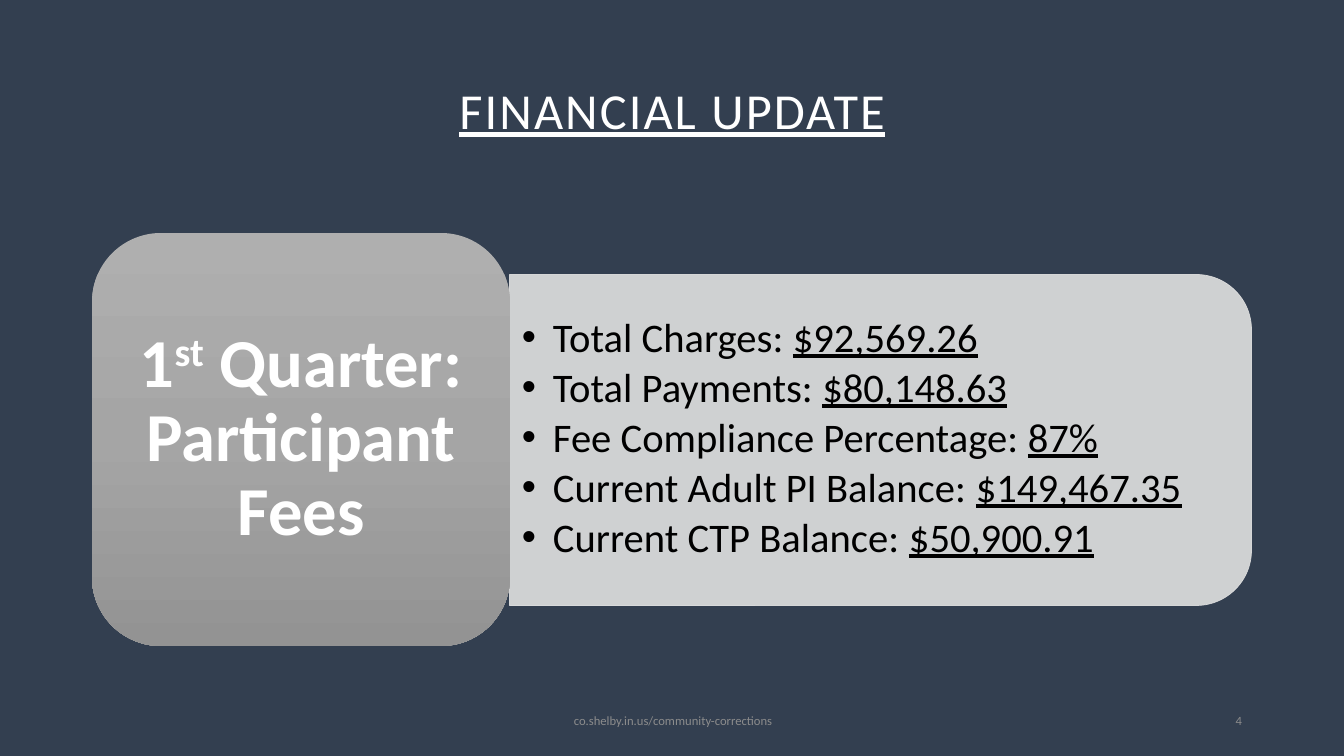
from dataclasses import dataclass

from copy import deepcopy
from pptx import Presentation, util as u
from pptx.dml.color import RGBColor
from pptx.enum import shapes, text
from pptx.oxml import ns, xmlchemy

NAVY = RGBColor(0x33, 0x3F, 0x50)
WHITE = RGBColor(0xFF, 0xFF, 0xFF)
BLACK = RGBColor(0, 0, 0)
GRAY = RGBColor(0x8C, 0x8C, 0x8C)
PALE = RGBColor(0xE1, 0xE1, 0xE1)
SHADES = [RGBColor(0xAF, 0xAF, 0xAF), RGBColor(0xA5, 0xA5, 0xA5),
          RGBColor(0x93, 0x93, 0x93)]
FONT = "Calibri"
ALIGN = text.PP_ALIGN
KIND = shapes.MSO_SHAPE


@dataclass
class Box:
    left: int
    top: int
    width: int
    height: int

    def emu(self) -> list:
        return [px(v) for v in (self.left, self.top, self.width, self.height)]


@dataclass
class Fee:
    label: str
    amount: str


@dataclass
class Note:
    words: str
    box: Box
    align: ALIGN


FEES = [
    Fee("Total Charges: ", "$92,569.26"),
    Fee("Total Payments: ", "$80,148.63"),
    Fee("Fee Compliance Percentage: ", "87%"),
    Fee("Current Adult PI Balance: ", "$149,467.35"),
    Fee("Current CTP Balance: ", "$50,900.91"),
]
NOTES = [
    Note("co.shelby.in.us/community-corrections", Box(446, 701, 454, 40), ALIGN.CENTER),
    Note("4", Box(950, 701, 302, 40), ALIGN.RIGHT),
]


def px(value: int) -> int:
    return round(value * 914400 / 100.8)


def write(para, words: str, *, size: int, color: RGBColor, bold=False,
          under=False, **attrs: str) -> None:
    """Add a run; attrs are raw run attributes such as spc or baseline."""
    run = para.add_run()
    run.text = words
    font = run.font
    font.name, font.size, font.bold, font.underline = FONT, u.Pt(size), bold, under
    font.color.rgb = color
    for name, value in attrs.items():
        font._element.set(name, value)


def frame(shape, side: int = 10, edge: int = 5):
    """Set wrapping, middle anchor and insets, and return the text frame."""
    tf = shape.text_frame
    tf.word_wrap = True
    tf.auto_size = text.MSO_AUTO_SIZE.NONE
    tf.vertical_anchor = text.MSO_ANCHOR.MIDDLE
    tf.margin_left = tf.margin_right = px(side)
    tf.margin_top = tf.margin_bottom = px(edge)
    return tf


def style(para, align: ALIGN, after: float = 0, lines: float = 0.9) -> None:
    para.alignment = align
    para.line_spacing = lines
    para.space_before = u.Pt(0)
    para.space_after = u.Pt(after)


def place(shape, box: Box) -> None:
    shape.left, shape.top, shape.width, shape.height = box.emu()


def bullet(para, indent: int) -> None:
    props = para._p.get_or_add_pPr()
    props.set("marL", str(px(indent)))
    props.set("indent", str(-px(indent)))
    mark = xmlchemy.OxmlElement("a:buChar")
    mark.set("char", "•")
    props.append(mark)


def fade(part, percent: int) -> None:
    """Make the solid colour of a fill or line see-through."""
    for tone in part.iter(ns.qn("a:srgbClr")):
        alpha = xmlchemy.OxmlElement("a:alpha")
        alpha.set("val", str(percent * 1000))
        tone.append(alpha)


def add_panel(slide):
    panel = slide.shapes.add_shape(KIND.ROUND_2_SAME_RECTANGLE,
                                   *Box(715, 69, 331, 742).emu())
    panel.rotation = 90
    panel.shadow.inherit = False
    panel.fill.solid()
    panel.fill.fore_color.rgb = PALE
    panel.line.color.rgb = PALE
    panel.line.width = u.Pt(0.5)
    fade(panel.element.spPr, 90)
    return panel


def add_card(slide) -> None:
    card = slide.shapes.add_shape(KIND.ROUNDED_RECTANGLE, *Box(92, 233, 418, 413).emu())
    card.shadow.inherit = False
    card.line.fill.background()
    card.fill.gradient()
    card.fill.gradient_angle = 270
    first = card.element.spPr.find(".//" + ns.qn("a:gs"))
    first.addnext(deepcopy(first))
    for i, (stop, shade) in enumerate(zip(card.fill.gradient_stops, SHADES)):
        stop.position = i / 2
        stop.color.rgb = shade
    para = frame(card, 20, 10).paragraphs[0]
    style(para, ALIGN.CENTER)
    look = dict(size=49, color=WHITE, bold=True)
    write(para, "1", **look)
    write(para, "st", baseline="30000", **look)
    write(para, " Quarter: Participant Fees", **look)


def add_list(body) -> None:
    place(body, Box(510, 290, 726, 298))
    tf = frame(body, 12, 6)
    for i, fee in enumerate(FEES):
        para = tf.add_paragraph() if i else tf.paragraphs[0]
        style(para, ALIGN.LEFT, 4.35)
        bullet(para, 31)
        write(para, fee.label, size=29, color=BLACK)
        write(para, fee.amount, size=29, color=BLACK, under=True)


def main() -> None:
    deck = Presentation()
    deck.slide_width, deck.slide_height = px(1344), px(756)
    slide = deck.slides.add_slide(deck.slide_layouts[1])
    slide.background.fill.solid()
    slide.background.fill.fore_color.rgb = NAVY

    title, body = slide.placeholders
    place(title, Box(93, 40, 1159, 146))
    head = frame(title).paragraphs[0]
    style(head, ALIGN.CENTER)
    write(head, "FINANCIAL UPDATE", size=36, color=WHITE, under=True, spc="150")

    for note in NOTES:
        para = frame(slide.shapes.add_textbox(*note.box.emu())).paragraphs[0]
        style(para, note.align, 6, 1.0)
        write(para, note.words, size=9, color=GRAY)

    panel = add_panel(slide)
    body.element.addprevious(panel.element)
    add_list(body)
    add_card(slide)
    deck.save("out.pptx")


if __name__ == "__main__":
    main()
